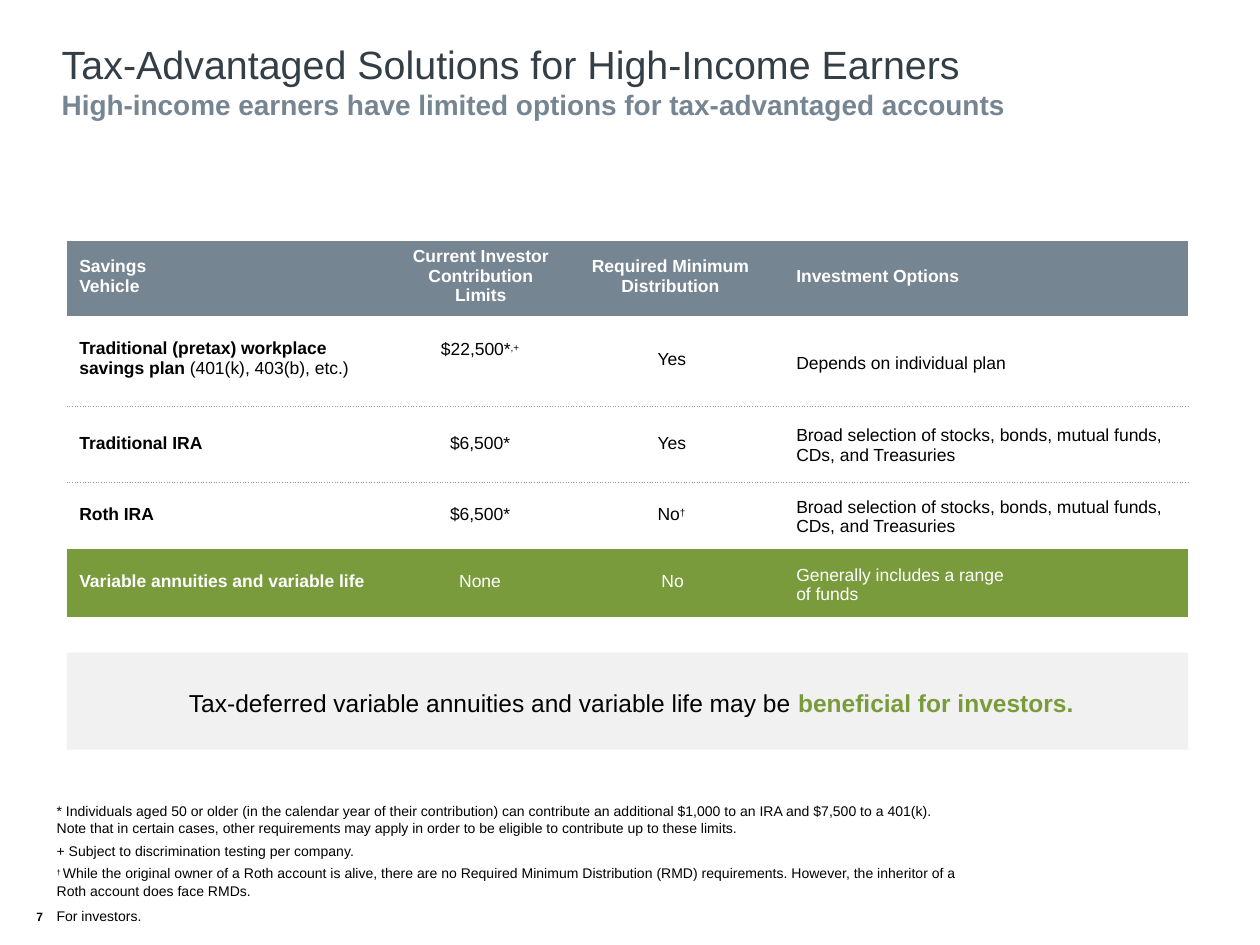
"""Build a slide on tax-advantaged savings vehicles for high-income earners."""
import dataclasses
import typing

import lxml.etree
import pptx
import pptx.dml.color
import pptx.enum.shapes
import pptx.enum.text
import pptx.oxml.ns
import pptx.util

Inches = pptx.util.Inches
Pt = pptx.util.Pt
qn = pptx.oxml.ns.qn
LEFT = pptx.enum.text.PP_ALIGN.LEFT
MID = pptx.enum.text.PP_ALIGN.CENTER


@dataclasses.dataclass(frozen=True)
class Theme:
    font: str = "Arial"
    ink: str = "000000"
    dark: str = "333E47"
    slate: str = "768592"
    green: str = "799B3C"
    pale: str = "F1F1F1"
    white: str = "FFFFFF"
    rule: str = "999999"
    title: float = 22.5
    sub: float = 16
    call: float = 14
    page: float = 12
    body: float = 10
    mark: float = 9.8
    note: float = 8
    sign: float = 7.5


THEME = Theme()


class Run(typing.NamedTuple):
    text: str
    size: float = THEME.body
    color: str = THEME.ink
    bold: bool = False
    base: int = 0


class Cell(typing.NamedTuple):
    runs: list[Run]
    top: float
    left: float = 0
    right: float = 0
    align: typing.Any = LEFT


class Row(typing.NamedTuple):
    height: float
    cells: list[Cell]
    fill: str | None = None
    ruled: bool = False


def shade(text: str) -> pptx.dml.color.RGBColor:
    return pptx.dml.color.RGBColor.from_string(text)


def write(para, runs: list[Run], *, align=LEFT, before: float = 0,
          lines: float | None = None, tab: float | None = None) -> None:
    para.alignment = align
    if lines:
        para.line_spacing = lines
    if before:
        para.space_before = Pt(before)
    if tab:
        tabs = lxml.etree.SubElement(para._p.get_or_add_pPr(), qn("a:tabLst"))
        lxml.etree.SubElement(tabs, qn("a:tab"), pos=str(Inches(tab)), algn="l")
    for item in runs:
        run = para.add_run()
        run.text = item.text
        run.font.name = THEME.font
        run.font.size = Pt(item.size)
        run.font.bold = item.bold
        run.font.color.rgb = shade(item.color)
        if item.base:
            run.font._element.set("baseline", str(item.base * 1000))


def inset(area, left: float, top: float, right: float = 0) -> None:
    area.margin_left, area.margin_top = Inches(left), Inches(top)
    area.margin_right, area.margin_bottom = Inches(right), Inches(0)


def frame(shape, left: float, top: float):
    area = shape.text_frame
    area.word_wrap = True
    area.vertical_anchor = pptx.enum.text.MSO_ANCHOR.TOP
    inset(area, left, top)
    return area


def block(slide, place: tuple, left: float, top: float, paras: list[list[Run]],
          **form) -> None:
    gap = form.pop("gap", 0)
    area = frame(slide.shapes.add_textbox(*map(Inches, place)), left, top)
    for num, runs in enumerate(paras):
        para = area.add_paragraph() if num else area.paragraphs[0]
        write(para, runs, before=gap if num else 0, **form)


def banner(slide, place: tuple, runs: list[Run]) -> None:
    kind = pptx.enum.shapes.MSO_SHAPE.RECTANGLE
    shape = slide.shapes.add_shape(kind, *map(Inches, place))
    shape.shadow.inherit = False
    shape.fill.solid()
    shape.fill.fore_color.rgb = shade(THEME.pale)
    shape.line.fill.background()
    write(frame(shape, 0.97, 0.28).paragraphs[0], runs)


def dots(cell) -> None:
    line = lxml.etree.Element(qn("a:lnB"), w=str(Pt(0.75)))
    fill = lxml.etree.SubElement(line, qn("a:solidFill"))
    lxml.etree.SubElement(fill, qn("a:srgbClr"), val=THEME.rule)
    lxml.etree.SubElement(line, qn("a:prstDash"), val="sysDot")
    cell._tc.get_or_add_tcPr().insert(0, line)


def grid(slide, place: tuple, cols: list[float], rows: list[Row]) -> None:
    shape = slide.shapes.add_table(len(rows), len(cols), *map(Inches, place))
    table = shape.table
    table.first_row = table.horz_banding = False
    style = table._tbl.tblPr.find(qn("a:tableStyleId"))
    style.text = "{2D5ABB26-0587-4C30-8999-92F81FD0307C}"
    for col, width in zip(table.columns, cols):
        col.width = Inches(width)
    for line, row in zip(table.rows, rows):
        line.height = Inches(row.height)
        for cell, item in zip(line.cells, row.cells):
            inset(cell, item.left, item.top, item.right)
            write(cell.text_frame.paragraphs[0], item.runs, align=item.align)
            if row.fill:
                cell.fill.solid()
                cell.fill.fore_color.rgb = shade(row.fill)
            else:
                cell.fill.background()
            if row.ruled:
                dots(cell)


def head(text: str) -> list[Run]:
    return [Run(text, color=THEME.white, bold=True)]


def plain(text: str, color: str = THEME.ink) -> list[Run]:
    return [Run(text, color=color)]


def vehicles() -> list[Row]:
    broad = plain("Broad selection of stocks, bonds, mutual funds, CDs, and Treasuries")
    limit = plain("$6,500*")
    plan = [Run("Traditional (pretax) workplace savings plan ", bold=True),
            Run("(401(k), 403(b), etc.)")]
    cap = [Run("$22,500*"), Run(",+", size=THEME.mark, base=26)]
    none = [Run("No"), Run("†", size=THEME.mark, base=26)]
    return [
        Row(0.6, [Cell(head("Savings Vehicle"), 0.13, 0.1, 1.5),
                  Cell(head("Current Investor Contribution Limits"), 0.05, 0.16, 0.14, MID),
                  Cell(head("Required Minimum Distribution"), 0.13, 0, 0.03, MID),
                  Cell(head("Investment Options"), 0.21, 0.18)], THEME.slate),
        Row(0.72, [Cell(plan, 0.18, 0.1, 0.2), Cell(cap, 0.19, 0.01, 0, MID),
                   Cell(plain("Yes"), 0.27, 0.69),
                   Cell(plain("Depends on individual plan"), 0.3, 0.18)], ruled=True),
        Row(0.6, [Cell([Run("Traditional IRA", bold=True)], 0.21, 0.1),
                  Cell(limit, 0.21, 0.01, 0, MID), Cell(plain("Yes"), 0.21, 0.69),
                  Cell(broad, 0.15, 0.18)], ruled=True),
        Row(0.53, [Cell([Run("Roth IRA", bold=True)], 0.18, 0.1),
                   Cell(limit, 0.18, 0.01, 0, MID), Cell(none, 0.18, 0.69),
                   Cell(broad, 0.12, 0.18)]),
        Row(0.54, [Cell(head("Variable annuities and variable life"), 0.18, 0.1),
                   Cell(plain("None", THEME.white), 0.18, 0.01, 0, MID),
                   Cell(plain("No", THEME.white), 0.18, 0.72),
                   Cell(plain("Generally includes a range of funds", THEME.white),
                        0.13, 0.18, 1.42)], THEME.green),
    ]


def main() -> None:
    deck = pptx.Presentation()
    deck.slide_width, deck.slide_height = Inches(10), Inches(7.5)
    slide = deck.slides.add_slide(deck.slide_layouts[6])
    block(slide, (0.48, 0.28, 8.88, 0.7), 0.01, 0.04, [
        [Run("Tax-Advantaged Solutions for High-Income Earners", THEME.title, THEME.dark)],
        [Run("High-income earners have limited options for tax-advantaged accounts",
             THEME.sub, THEME.slate, True)]])
    grid(slide, (0.53, 1.91, 8.9, 2.99), [2.55, 1.45, 1.61, 3.29], vehicles())
    banner(slide, (0.53, 5.18, 8.9, 0.77), [
        Run("Tax-deferred variable annuities and variable life may be ", THEME.call),
        Run("beneficial for investors.", THEME.call, THEME.green, True)])
    block(slide, (0.41, 6.34, 7.26, 0.78), 0.04, 0.02, [
        [Run("* Individuals aged 50 or older (in the calendar year of their contribution) "
             "can contribute an additional $1,000 to an IRA and $7,500 to a 401(k). "
             "Note that in certain cases, other requirements may apply in order to be "
             "eligible to contribute up to these limits.", THEME.note)],
        [Run("+ Subject to discrimination testing per company.", THEME.note)],
        [Run("† ", THEME.sign, base=28),
         Run("While the original owner of a Roth account is alive, there are no Required "
             "Minimum Distribution (RMD) requirements. However, the inheritor of a Roth "
             "account does face RMDs.", THEME.note)]], gap=3, lines=1.04)
    block(slide, (0.19, 6.97, 5.02, 0.32), 0.1, 0.18, [
        [Run("7\t", THEME.page, bold=True, base=3), Run("For investors.", THEME.note)]],
        tab=0.16)
    deck.save("out.pptx")


if __name__ == "__main__":
    main()
